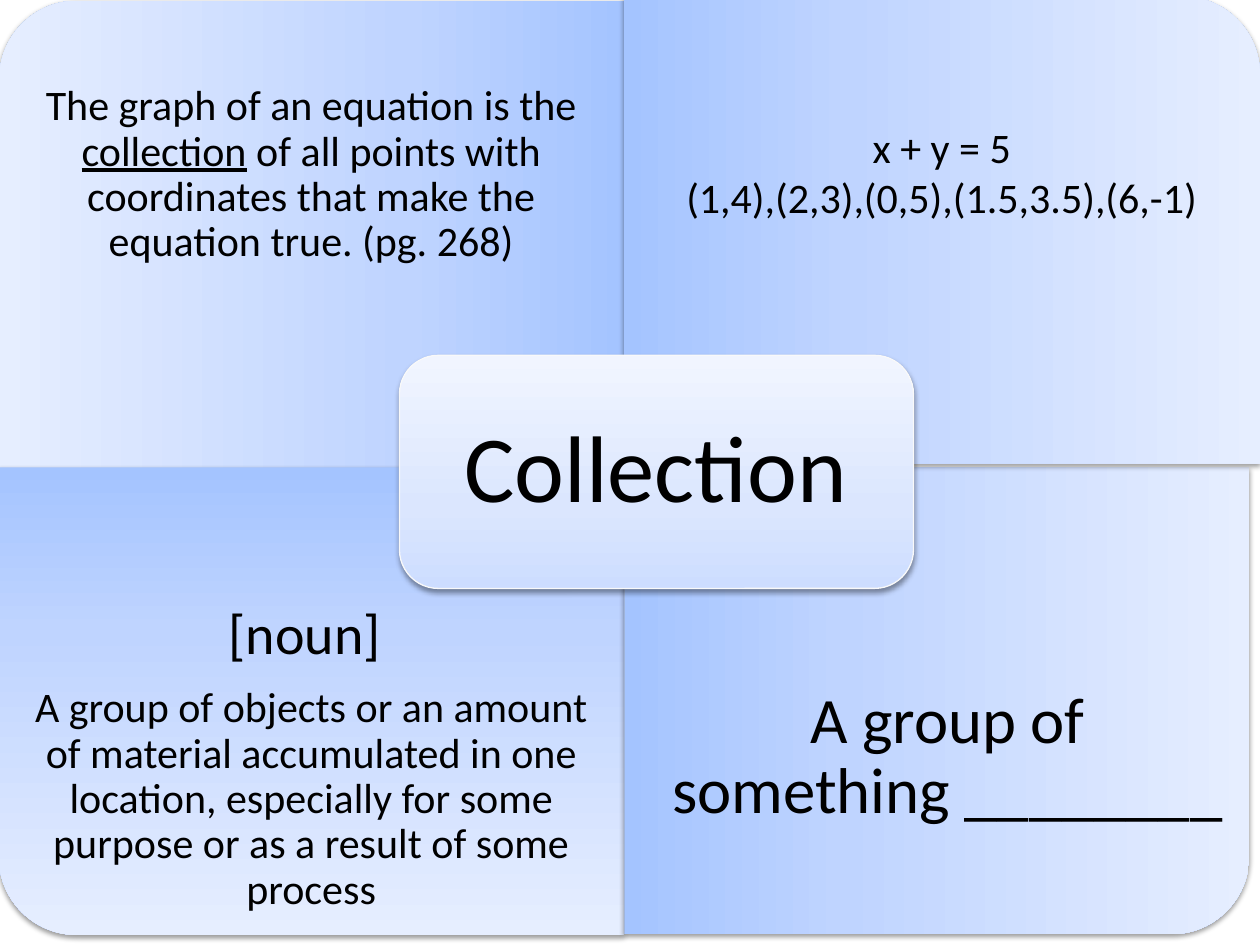
from copy import deepcopy
from dataclasses import dataclass

from lxml import etree
from pptx import Presentation
from pptx.dml.color import RGBColor
from pptx.enum.shapes import MSO_SHAPE
from pptx.enum.text import MSO_ANCHOR, PP_ALIGN
from pptx.oxml.ns import qn
from pptx.util import Inches, Pt

CORNER = MSO_SHAPE.ROUND_1_RECTANGLE
ROUNDED = MSO_SHAPE.ROUNDED_RECTANGLE
MIDDLE = MSO_ANCHOR.MIDDLE
CENTER = PP_ALIGN.CENTER

Box = tuple[float, float, float, float]


@dataclass(frozen=True)
class Theme:
    font: str = "Calibri"
    ink: str = "000000"
    border: str = "F9F9F9"
    quadrant: tuple = ("A4C4FF", "BFD4FF", "E6EEFF")
    hub: tuple = ("CDDDFF", "DBE6FE", "F1F5FF")
    stops: tuple = (0, 0.35, 1)
    body: int = 24
    label: int = 32
    prompt: int = 37
    word: int = 54


THEME = Theme()


@dataclass(frozen=True)
class Para:
    runs: tuple[str, ...]  # every second run is underlined
    size: int = THEME.body
    line_spacing: float = 0.9
    after: float = 0.35  # share of the type size


@dataclass(frozen=True)
class Panel:
    box: Box
    text_box: Box
    inset: float
    paras: tuple[Para, ...]
    rotation: int = 0
    flip: bool = False
    hub: bool = False


PANELS = (
    Panel((0.62, -0.62, 3.71, 4.96), (-0.01, 0, 4.96, 2.78), 0.19,
          (Para(("The graph of an equation is the ", "collection",
                 " of all points with coordinates that make the equation true. (pg. 268)")),),
          rotation=270),
    Panel((-0.01, 3.71, 4.96, 3.71), (-0.01, 4.64, 4.96, 2.78), 0.25,
          (Para(("[noun] ",), THEME.label),
           Para(("A group of objects or an amount of material accumulated in one location, "
                 "especially for some purpose or as a result of some process",))),
          rotation=180),
    Panel((5.58, 3.08, 3.71, 4.96), (5.04, 4.62, 4.96, 2.78), 0.29,
          (Para(("A group of something ________",), THEME.prompt),), rotation=90),
    Panel((5.62, -0.7, 3.71, 5.05), (4.95, -0.03, 5.05, 2.78), 0.19,
          (Para(("x + y = 5",), line_spacing=1, after=0),
           Para(("(1,4),(2,3),(0,5),(1.5,3.5),(6,-1)",), line_spacing=1, after=0)),
          rotation=90, flip=True),
    Panel((3.17, 2.82, 4.08, 1.85), (3.29, 2.91, 3.83, 1.67), 0.23,
          (Para(("Collection",), THEME.word),), hub=True),
)


def fill_gradient(s, colors: tuple[str, ...]) -> None:
    """Fill from the bottom edge to the top edge with three stops."""
    s.fill.gradient()
    s.fill.gradient_angle = 90
    stop_list = s.element.spPr.find(".//" + qn("a:gsLst"))
    stop_list.append(deepcopy(stop_list[-1]))
    for stop, color, position in zip(s.fill.gradient_stops, colors, THEME.stops):
        stop.color.rgb = RGBColor.from_string(color)
        stop.position = position


def add_shadow(s) -> None:
    s.shadow.inherit = False
    effects = s.element.spPr.find(qn("a:effectLst"))
    shadow = etree.SubElement(effects, qn("a:outerShdw"), blurRad=str(Pt(3.1)),
                              dist=str(Pt(1.6)), dir="5400000", rotWithShape="0")
    color = etree.SubElement(shadow, qn("a:srgbClr"), val=THEME.ink)
    etree.SubElement(color, qn("a:alpha"), val="38000")


def add_text(shapes, panel: Panel) -> None:
    tf = shapes.add_textbox(*map(Inches, panel.text_box)).text_frame
    inset = Inches(panel.inset)
    frame = dict(word_wrap=True, vertical_anchor=MIDDLE, margin_left=inset,
                 margin_top=inset, margin_right=inset, margin_bottom=inset)
    for name, value in frame.items():
        setattr(tf, name, value)
    for i, para in enumerate(panel.paras):
        p = tf.add_paragraph() if i else tf.paragraphs[0]
        p.alignment = CENTER
        p.line_spacing = para.line_spacing
        p.space_after = Pt(para.after * para.size)
        for j, text in enumerate(para.runs):
            r = p.add_run()
            r.text = text
            style = dict(name=THEME.font, size=Pt(para.size), underline=j % 2 == 1)
            for name, value in style.items():
                setattr(r.font, name, value)
            r.font.color.rgb = RGBColor.from_string(THEME.ink)


def add_panel(slide, panel: Panel) -> None:
    shapes = slide.shapes.add_group_shape().shapes
    s = shapes.add_shape(ROUNDED if panel.hub else CORNER, *map(Inches, panel.box))
    s.rotation = panel.rotation
    if panel.flip:
        s.element.spPr.find(qn("a:xfrm")).set("flipH", "1")
    fill_gradient(s, THEME.hub if panel.hub else THEME.quadrant)
    if panel.hub:
        s.line.color.rgb = RGBColor.from_string(THEME.border)
        s.line.width = Pt(0.75)
    else:
        s.line.fill.background()
    add_shadow(s)
    add_text(shapes, panel)


def main() -> None:
    prs = Presentation()
    prs.slide_width, prs.slide_height = Inches(10), Inches(7.5)
    slide = prs.slides.add_slide(prs.slide_layouts[6])
    for panel in PANELS:
        add_panel(slide, panel)
    prs.save("out.pptx")


if __name__ == "__main__":
    main()
